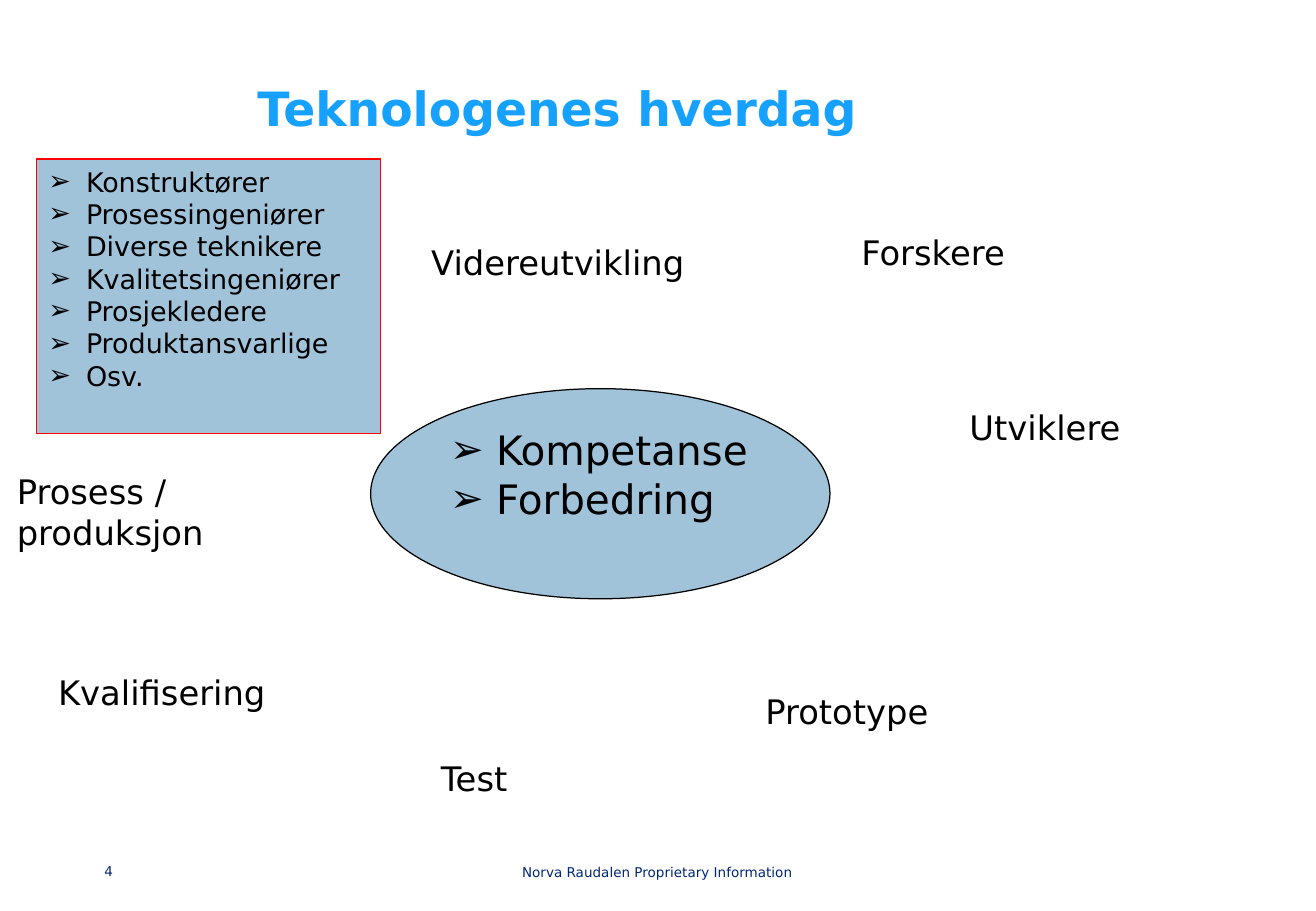
from lxml import etree
from pptx import Presentation
from pptx.dml.color import RGBColor
from pptx.enum.shapes import MSO_SHAPE
from pptx.enum.text import MSO_ANCHOR, PP_ALIGN
from pptx.oxml.ns import qn
from pptx.util import Inches, Pt

RECT, OVAL = MSO_SHAPE.RECTANGLE, MSO_SHAPE.OVAL
LEFT, CENTER, RIGHT = PP_ALIGN.LEFT, PP_ALIGN.CENTER, PP_ALIGN.RIGHT
TOP, MIDDLE = MSO_ANCHOR.TOP, MSO_ANCHOR.MIDDLE

FONT = "DejaVu Sans"
COLORS = {
    "text": "000000",
    "title": "17A1FF",
    "footer": "002774",
    "panel": "A0C3DA",
    "red": "FF0000",
}

ROLES = ["Konstruktører", "Prosessingeniører", "Diverse teknikere",
         "Kvalitetsingeniører", "Prosjekledere", "Produktansvarlige", "Osv."]
GOALS = ["Kompetanse", "Forbedring"]
ACTIVITIES = [  # text, left, top, width, height
    ("Forskere", 6.99, 1.86, 2.28, 0.44),
    ("Utviklere", 7.88, 3.3, 2.6, 0.44),
    ("Prototype", 6.2, 5.64, 2.6, 0.44),
    ("Test", 3.53, 6.19, 2.6, 0.44),
    ("Kvalifisering", 0.38, 5.48, 2.6, 0.44),
    ("Prosess / produksjon", 0.04, 3.83, 2.6, 0.77),
    ("Videreutvikling", 3.45, 1.94, 2.6, 0.44),
]


def rgb(name):
    return RGBColor.from_string(COLORS[name])


def style(p, size, color="text", bold=False, align=LEFT):
    p.alignment = align
    for r in p.runs:
        r.font.name = FONT
        r.font.size = Pt(size)
        r.font.bold = bold
        r.font.color.rgb = rgb(color)


def add_label(slide, text, box, size, color="text", bold=False,
              align=LEFT, anchor=TOP):
    sp = slide.shapes.add_textbox(*map(Inches, box))
    tf = sp.text_frame
    tf.word_wrap = True
    tf.vertical_anchor = anchor
    tf.text = text
    style(tf.paragraphs[0], size, color, bold, align)
    return sp


def add_bullet(p, indent):
    pPr = p._p.get_or_add_pPr()
    pPr.set("marL", str(Inches(indent)))
    pPr.set("indent", str(-Inches(indent)))
    etree.SubElement(pPr, qn("a:buFont")).set("typeface", "Wingdings")
    pPr[-1].set("typeface", FONT)
    etree.SubElement(pPr, qn("a:buChar")).set("char", "➢")


def add_bullet_panel(slide, kind, items, box, line, size, indent):
    """Filled shape holding a bulleted list."""
    sp = slide.shapes.add_shape(kind, *map(Inches, box))
    sp.shadow.inherit = False
    sp.fill.solid()
    sp.fill.fore_color.rgb = rgb("panel")
    sp.line.color.rgb = rgb(line)
    sp.line.width = Pt(0.75)
    tf = sp.text_frame
    tf.word_wrap = True
    tf.vertical_anchor = TOP
    tf.text = "\n".join(items)
    for p in tf.paragraphs:
        add_bullet(p, indent)
        style(p, size)


def add_footer(slide, top, height):
    number = add_label(slide, "4", (0.62, top, 0.35, height), 8, "footer",
                       align=RIGHT)
    number.text_frame.margin_right = Inches(0.04)
    add_label(slide, "Norva Raudalen Proprietary Information",
              (3.05, top, 4.72, height), 8, "footer",
              align=CENTER, anchor=MIDDLE)


def main():
    prs = Presentation()
    prs.slide_width, prs.slide_height = Inches(10.83), Inches(7.5)
    slide = prs.slides.add_slide(prs.slide_layouts[6])

    add_footer(slide, 7.06, 0.24)
    add_label(slide, "Teknologenes hverdag", (2.02, 0.6, 8.22, 1.18), 28,
              "title", bold=True)
    add_bullet_panel(slide, OVAL, GOALS, (3.05, 3.2, 3.78, 1.73),
                     "text", 24, 0.38)
    for text, *box in ACTIVITIES:
        add_label(slide, text, box, 20)
    add_bullet_panel(slide, RECT, ROLES, (0.3, 1.31, 2.83, 2.26),
                     "red", 16, 0.31)

    prs.save("out.pptx")


if __name__ == "__main__":
    main()
